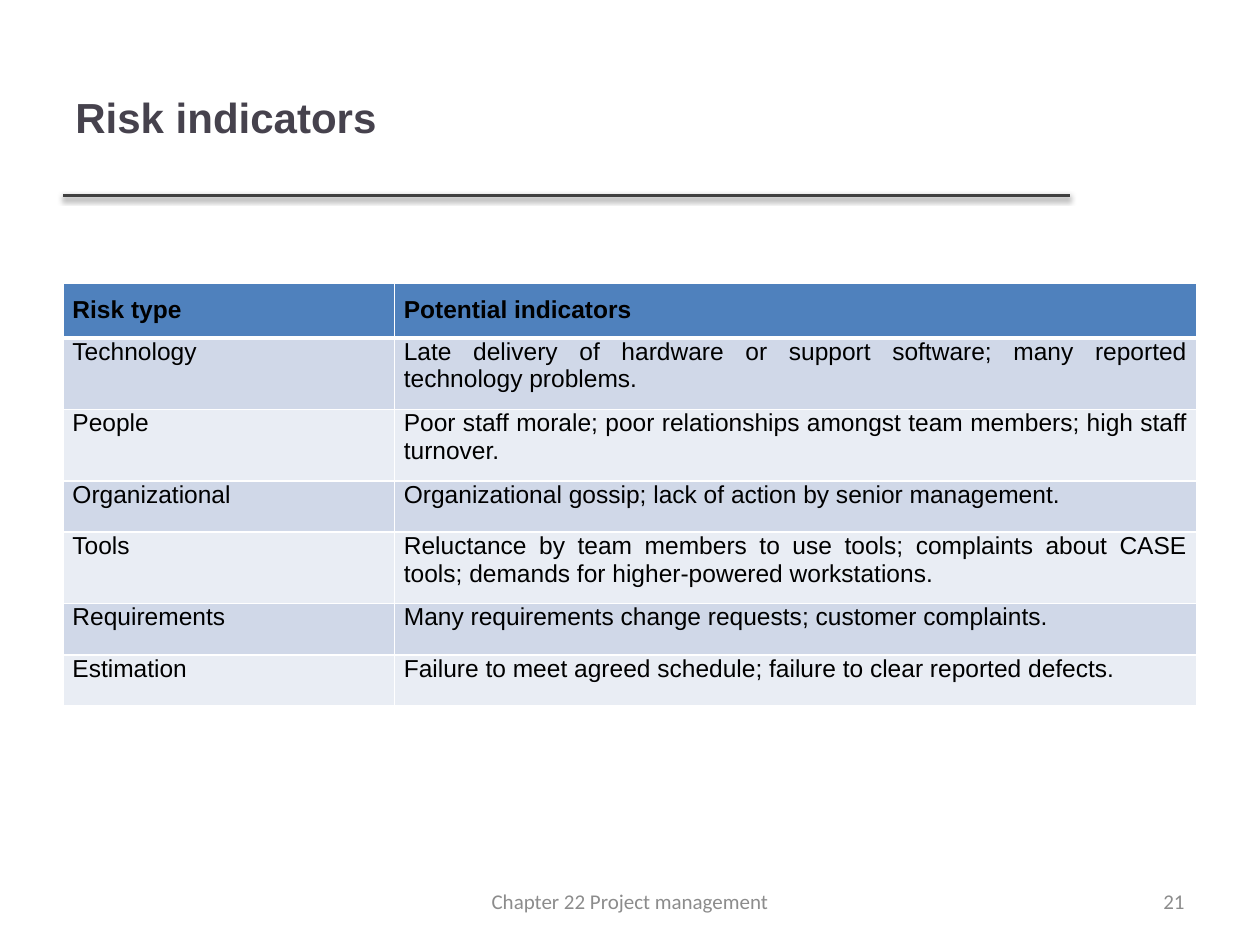
"""Build the risk indicators slide."""
from lxml.etree import SubElement
from pptx import Presentation
from pptx.dml.color import RGBColor
from pptx.enum.shapes import MSO_CONNECTOR
from pptx.enum.text import MSO_ANCHOR, PP_ALIGN
from pptx.oxml import parse_xml
from pptx.oxml.ns import nsdecls, qn
from pptx.util import Pt

COLORS = {
    "title": "46424D", "rule": "404040", "text": "000000", "footer": "8C8C8C",
    "header": "4F81BD", "odd": "D0D8E8", "even": "E9EDF4", "border": "FFFFFF",
}
RISKS = [
    ("Risk type", "Potential indicators"),
    ("Technology", "Late delivery of hardware or support software; many reported technology problems."),
    ("People", "Poor staff morale; poor relationships amongst team members; high staff turnover."),
    ("Organizational", "Organizational gossip; lack of action by senior management."),
    ("Tools", "Reluctance by team members to use tools; complaints about CASE tools; "
              "demands for higher-powered workstations."),
    ("Requirements", "Many requirements change requests; customer complaints."),
    ("Estimation", "Failure to meet agreed schedule; failure to clear reported defects."),
]
COLUMN_WIDTHS = (189.4, 458.6)
ROW_HEIGHT = 29.2
LEFT = 36


def color(name):
    return RGBColor.from_string(COLORS[name])


def write(frame, text, size=14, font="Arial", fill="text", bold=False, align=PP_ALIGN.LEFT):
    paragraph = frame.paragraphs[0]
    paragraph.alignment = align
    run = paragraph.add_run()
    run.text = text
    run.font.size, run.font.name, run.font.bold = Pt(size), font, bold
    run.font.color.rgb = color(fill)


def add_text(slide, text, left, top, width, height, **style):
    frame = slide.shapes.add_textbox(Pt(left), Pt(top), Pt(width), Pt(height)).text_frame
    frame.word_wrap = True
    frame.vertical_anchor = MSO_ANCHOR.MIDDLE
    write(frame, text, **style)


def add_title_rule(slide):
    y = Pt(111.6)
    rule = slide.shapes.add_connector(MSO_CONNECTOR.STRAIGHT, Pt(LEFT), y, Pt(611.3), y)
    rule.line.color.rgb = color("rule")
    rule.line.width = Pt(2)
    rule._element.spPr.append(parse_xml(
        f'<a:effectLst {nsdecls("a")}><a:outerShdw blurRad="{Pt(3.1)}" dist="{Pt(1.6)}" '
        'dir="5400000" rotWithShape="0"><a:srgbClr val="000000"><a:alpha val="38000"/>'
        '</a:srgbClr></a:outerShdw></a:effectLst>'))


def add_borders(cell, **widths):
    properties = cell._tc.get_or_add_tcPr()
    for side in "LRTB":
        border = SubElement(properties, qn(f"a:ln{side}"), w=str(Pt(widths.get(side, 1))))
        solid = SubElement(border, qn("a:solidFill"))
        SubElement(solid, qn("a:srgbClr"), val=COLORS["border"])


def fill_cell(cell, text, row):
    header = row == 0
    cell.margin_left = cell.margin_right = Pt(5.4)
    cell.margin_top = Pt(7.2 if header else 0)
    cell.margin_bottom = Pt(7.2)
    add_borders(cell, T=3 if row == 1 else 1, B=3 if header else 1)
    cell.fill.solid()
    cell.fill.fore_color.rgb = color("header" if header else "odd" if row % 2 else "even")
    write(cell.text_frame, text, bold=header, align=PP_ALIGN.JUSTIFY)


def add_risk_table(slide):
    table = slide.shapes.add_table(
        len(RISKS), len(COLUMN_WIDTHS), Pt(LEFT), Pt(162),
        Pt(sum(COLUMN_WIDTHS)), Pt(ROW_HEIGHT * len(RISKS))).table
    for column, width in zip(table.columns, COLUMN_WIDTHS):
        column.width = Pt(width)
    for row, texts in enumerate(RISKS):
        table.rows[row].height = Pt(ROW_HEIGHT)
        for column, text in enumerate(texts):
            fill_cell(table.cell(row, column), text, row)


def main():
    deck = Presentation()
    deck.slide_width, deck.slide_height = Pt(720), Pt(540)
    slide = deck.slides.add_slide(deck.slide_layouts[6])
    add_title_rule(slide)
    add_text(slide, "Risk indicators", LEFT, 21.6, 574.6, 90, size=24, fill="title", bold=True)
    add_risk_table(slide)
    footer = {"size": 12, "font": "Calibri", "fill": "footer"}
    add_text(slide, "21", 516, 500.5, 168, 28.8, align=PP_ALIGN.RIGHT, **footer)
    add_text(slide, "Chapter 22 Project management", 246, 500.5, 228, 28.8,
             align=PP_ALIGN.CENTER, **footer)
    deck.save("out.pptx")


if __name__ == "__main__":
    main()
